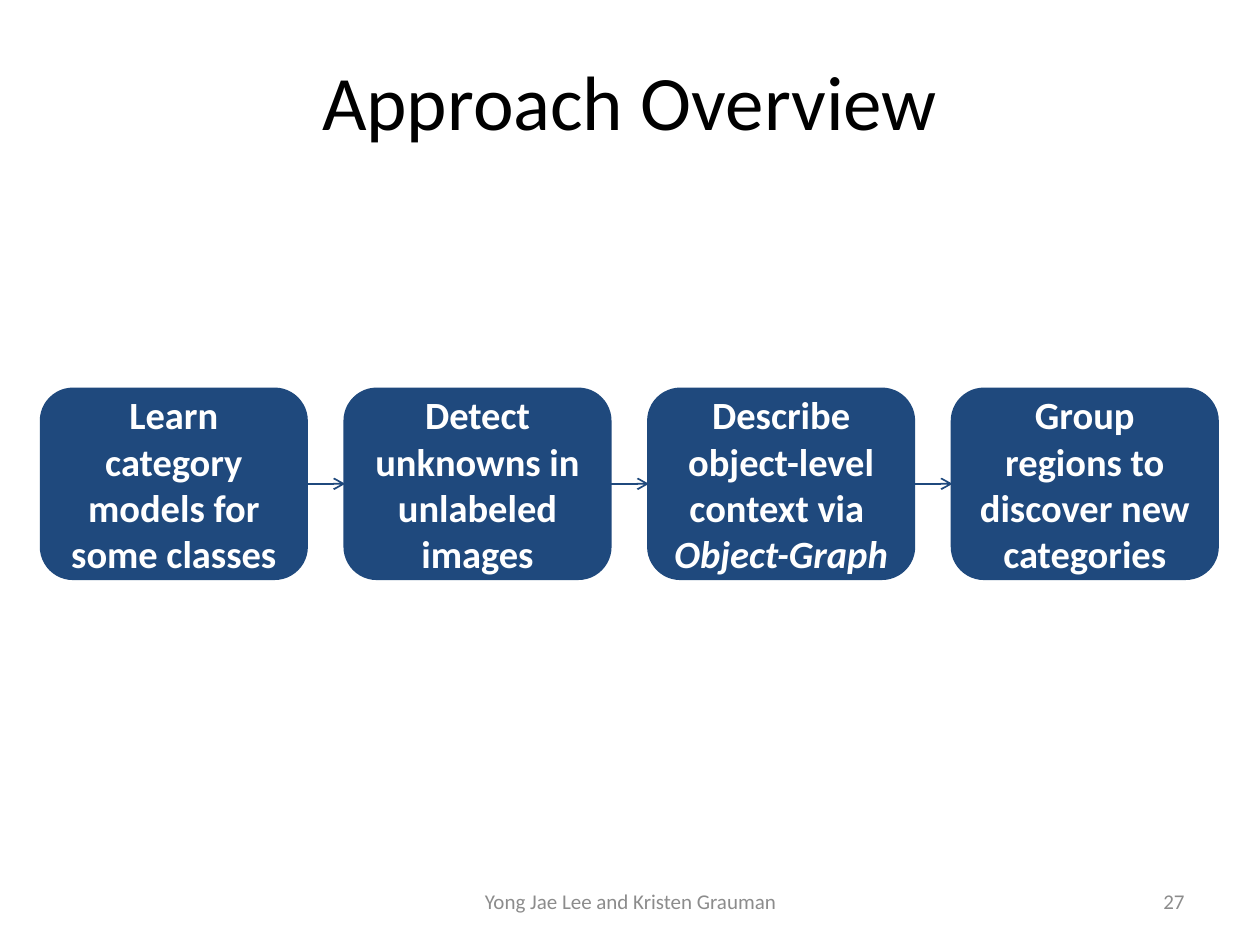
"""Build the approach overview slide: four steps joined by arrows."""
from dataclasses import dataclass

import lxml.etree
import pptx
import pptx.dml.color
import pptx.enum.shapes
import pptx.enum.text
import pptx.oxml.ns
import pptx.util

SLIDE_WIDTH, SLIDE_HEIGHT = 10, 7.5
STEP_LEFT, STEP_TOP = 0.33, 3.09
STEP_WIDTH, STEP_HEIGHT = 2.1, 1.5
STEP_PITCH = 2.41
FONT = "Calibri"
COLORS = {"navy": "1F497D", "white": "FFFFFF", "black": "000000", "gray": "8C8C8C"}
ALIGN = pptx.enum.text.PP_ALIGN
Inches = pptx.util.Inches


@dataclass(frozen=True)
class Step:
    """One stage of the approach, with an optional italic last line."""

    text: str
    emphasis: str = ""


@dataclass(frozen=True)
class FooterItem:
    """A footer text with its left edge, width and alignment."""

    text: str
    left: float
    width: float
    alignment: pptx.enum.text.PP_ALIGN


STEPS = [
    Step("Learn category models for some classes"),
    Step("Detect unknowns in unlabeled images"),
    Step("Describe object-level context via ", "Object-Graph"),
    Step("Group regions to discover new categories"),
]
FOOTER = [
    FooterItem("Yong Jae Lee and Kristen Grauman", 3.42, 3.17, ALIGN.CENTER),
    FooterItem("27", 7.17, 2.33, ALIGN.RIGHT),
]


def rgb(name: str) -> pptx.dml.color.RGBColor:
    """Return the named colour."""
    return pptx.dml.color.RGBColor.from_string(COLORS[name])


def format_text(shape, size: float, color: str, alignment=ALIGN.CENTER, bold=False) -> None:
    """Format every paragraph of a shape and centre the text vertically."""
    shape.text_frame.word_wrap = True
    shape.text_frame.vertical_anchor = pptx.enum.text.MSO_ANCHOR.MIDDLE
    for paragraph in shape.text_frame.paragraphs:
        paragraph.alignment = alignment
        for run in paragraph.runs:
            run.font.name = FONT
            run.font.size = pptx.util.Pt(size)
            run.font.bold = bold
            run.font.color.rgb = rgb(color)


def step_left(column: int) -> float:
    """Return the left edge of a step column."""
    return STEP_LEFT + column * STEP_PITCH


def add_title(slide, text: str) -> None:
    """Place and format the slide title."""
    title = slide.shapes.title
    title.left, title.top = Inches(0.5), Inches(0.17)
    title.width, title.height = Inches(SLIDE_WIDTH - 1), Inches(1.25)
    title.text_frame.text = text
    format_text(title, 44, "black")


def add_step(slide, column: int, step: Step) -> None:
    """Draw one rounded step box."""
    shape = slide.shapes.add_shape(
        pptx.enum.shapes.MSO_SHAPE.ROUNDED_RECTANGLE,
        Inches(step_left(column)), Inches(STEP_TOP), Inches(STEP_WIDTH), Inches(STEP_HEIGHT),
    )
    shape.shadow.inherit = False
    shape.fill.solid()
    shape.fill.fore_color.rgb = rgb("navy")
    shape.line.color.rgb = rgb("navy")
    shape.line.width = pptx.util.Pt(2)
    shape.text_frame.text = step.text
    if step.emphasis:
        shape.text_frame.add_paragraph().text = step.emphasis
    format_text(shape, 22, "white", bold=True)
    if step.emphasis:
        shape.text_frame.paragraphs[-1].runs[0].font.italic = True


def add_arrow(slide, column: int) -> None:
    """Draw the arrow from a step to the next one."""
    middle = Inches(STEP_TOP + STEP_HEIGHT / 2)
    connector = slide.shapes.add_connector(
        pptx.enum.shapes.MSO_CONNECTOR.STRAIGHT,
        Inches(step_left(column) + STEP_WIDTH), middle, Inches(step_left(column + 1)), middle,
    )
    connector.line.color.rgb = rgb("navy")
    connector.line.width = pptx.util.Pt(1)
    qn = pptx.oxml.ns.qn
    properties = connector.element.spPr
    lxml.etree.SubElement(properties.find(qn("a:ln")), qn("a:tailEnd"), type="arrow")
    lxml.etree.SubElement(properties, qn("a:effectLst"))


def add_footer_item(slide, item: FooterItem) -> None:
    """Draw one footer text."""
    box = slide.shapes.add_textbox(
        Inches(item.left), Inches(SLIDE_HEIGHT - 0.55), Inches(item.width), Inches(0.4)
    )
    box.text_frame.text = item.text
    format_text(box, 12, "gray", item.alignment)


def main() -> None:
    """Build and save the presentation."""
    presentation = pptx.Presentation()
    presentation.slide_width = Inches(SLIDE_WIDTH)
    presentation.slide_height = Inches(SLIDE_HEIGHT)
    slide = presentation.slides.add_slide(presentation.slide_layouts.get_by_name("Title Only"))
    add_title(slide, "Approach Overview")
    for column, step in enumerate(STEPS):
        add_step(slide, column, step)
    for column in range(len(STEPS) - 1):
        add_arrow(slide, column)
    for item in FOOTER:
        add_footer_item(slide, item)
    presentation.save("out.pptx")


if __name__ == "__main__":
    main()
